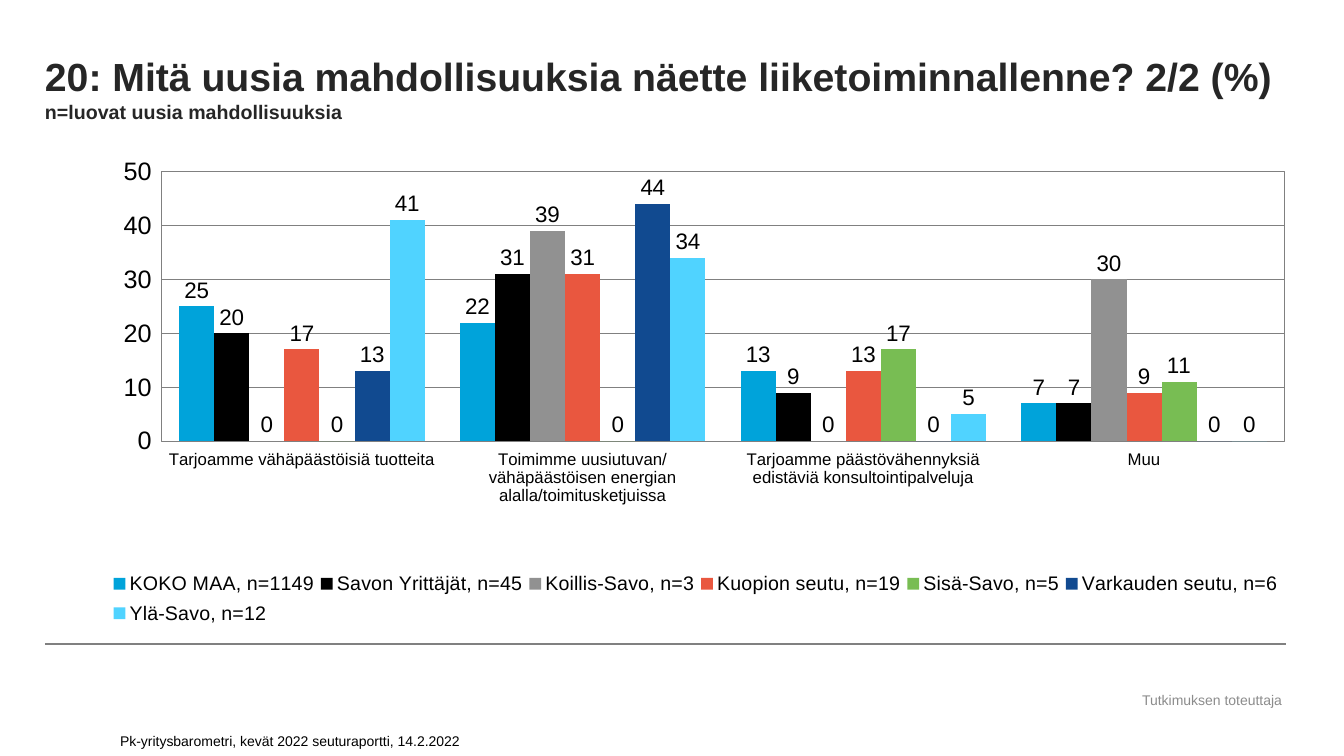
from lxml import etree
from pptx import Presentation
from pptx import util as u
from pptx.chart.data import CategoryChartData
from pptx.dml.color import RGBColor
from pptx.enum import chart as ch, shapes, text
from pptx.oxml import ns

PX = 914400 / 100.8
THEME = {
    "font": "Arial", "title": "262626", "ink": "000000", "muted": "8C8C8C", "line": "808080",
    "head": 28, "sub": 14, "note": 10, "axis": 18, "cat": 12, "label": 16, "key": 14,
}
CATS = [
    "Tarjoamme vähäpäästöisiä tuotteita",
    "Toimimme uusiutuvan/vähäpäästöisen energian alalla/toimitusketjuissa",
    "Tarjoamme päästövähennyksiä edistäviä konsultointipalveluja",
    "Muu",
]
SERIES = [
    ("KOKO MAA, n=1149", (25, 22, 13, 7), "00A3DA"),
    ("Savon Yrittäjät, n=45", (20, 31, 9, 7), "000000"),
    ("Koillis-Savo, n=3", (0, 39, 0, 30), "919191"),
    ("Kuopion seutu, n=19", (17, 31, 13, 9), "E9573F"),
    ("Sisä-Savo, n=5", (0, 0, 17, 11), "78BD53"),
    ("Varkauden seutu, n=6", (13, 44, 0, 0), "114A90"),
    ("Ylä-Savo, n=12", (41, 34, 5, 0), "50D3FF"),
]


def style(font, size, color="ink", bold=False):
    form = {"name": THEME["font"], "size": u.Pt(THEME[size]), "bold": bold}
    for key, val in form.items():
        setattr(font, key, val)
    font.color.rgb = RGBColor.from_string(THEME[color])


def place(part, index, **spots):
    """Give a chart part a manual layout."""
    for old in part.findall(ns.qn("c:layout")):
        part.remove(old)
    layout = etree.Element(ns.qn("c:layout"))
    manual = etree.SubElement(layout, ns.qn("c:manualLayout"))
    for tag, val in spots.items():
        etree.SubElement(manual, ns.qn("c:" + tag)).set("val", str(val))
    part.insert(index, layout)


deck = Presentation()
deck.slide_width, deck.slide_height = round(1344 * PX), round(756 * PX)
slide = deck.slides.add_slide(deck.slide_layouts[6])

# Title, source note and footer
TEXTS = [
    ((45, 0, 1240, 123), 0, text.MSO_ANCHOR.BOTTOM, text.PP_ALIGN.LEFT, [
        ("20: Mitä uusia mahdollisuuksia näette liiketoiminnallenne? 2/2 (%)", "head", "title", True),
        ("n=luovat uusia mahdollisuuksia", "sub", "title", True)]),
    ((110, 719, 545, 35), 5, text.MSO_ANCHOR.BOTTOM, text.PP_ALIGN.LEFT, [
        ("Pk-yritysbarometri, kevät 2022 seuturaportti, 14.2.2022", "note", "ink", False)]),
    ((1125, 687, 174, 26), 5, text.MSO_ANCHOR.MIDDLE, text.PP_ALIGN.CENTER, [
        ("Tutkimuksen toteuttaja", "note", "muted", False)]),
]
for box, pad, anchor, align, runs in TEXTS:
    frame = slide.shapes.add_textbox(*[round(n * PX) for n in box]).text_frame
    form = {
        "word_wrap": True, "vertical_anchor": anchor,
        "margin_left": round(2 * pad * PX), "margin_right": round(2 * pad * PX),
        "margin_top": round(pad * PX), "margin_bottom": round(pad * PX),
    }
    for key, val in form.items():
        setattr(frame, key, val)
    para = frame.paragraphs[0]
    para.alignment = align
    for i, (words, size, color, bold) in enumerate(runs):
        if i:
            para.add_line_break()
        run = para.add_run()
        run.text = words
        style(run.font, size, color, bold)

# Rule above the footer
ends = [round(n * PX) for n in (45, 644, 1286, 644)]
rule = slide.shapes.add_connector(shapes.MSO_CONNECTOR.STRAIGHT, *ends)
rule.line.width = u.Pt(1.5)
rule.line.color.rgb = RGBColor.from_string(THEME["line"])
etree.SubElement(rule.element.spPr, ns.qn("a:effectLst"))

# Column chart
data = CategoryChartData(number_format="#,##0")
data.categories = CATS
for name, vals, color in SERIES:
    data.add_series(name, vals)
area = [round(n * PX) for n in (45, 156, 1240, 476)]
chart = slide.shapes.add_chart(ch.XL_CHART_TYPE.COLUMN_CLUSTERED, *area, data).chart
chart.has_title = False
style(chart.font, "axis")
plot = chart.plots[0]
plot.gap_width, plot.overlap, plot.vary_by_categories = 100, 0, False
for item, (name, vals, color) in zip(plot.series, SERIES):
    item.format.fill.solid()
    item.format.fill.fore_color.rgb = RGBColor.from_string(color)
    item.invert_if_negative = False
    labels = item.data_labels
    form = {
        "show_value": True, "number_format": "#,##0", "number_format_is_linked": False,
        "position": ch.XL_LABEL_POSITION.OUTSIDE_END,
    }
    for key, val in form.items():
        setattr(labels, key, val)
    style(labels.font, "label")

# Axes and grid
cat, val = chart.category_axis, chart.value_axis
val.minimum_scale, val.maximum_scale, val.major_unit = 0, 50, 10
val.has_major_gridlines = True
for axis, size in ((cat, "cat"), (val, "axis")):
    axis.major_tick_mark = axis.minor_tick_mark = ch.XL_TICK_MARK.NONE
    axis.tick_label_position = ch.XL_TICK_LABEL_POSITION.LOW
    style(axis.tick_labels.font, size)
for part in (cat, val, val.major_gridlines):
    part.format.line.width = u.Pt(0.75)
    part.format.line.color.rgb = RGBColor.from_string(THEME["line"])

# Plot frame
body = chart.element.find(".//" + ns.qn("c:plotArea"))
look = etree.SubElement(body, ns.qn("c:spPr"))
etree.SubElement(look, ns.qn("a:noFill"))
edge = etree.SubElement(look, ns.qn("a:ln"), w="9525")
fill = etree.SubElement(edge, ns.qn("a:solidFill"))
etree.SubElement(fill, ns.qn("a:srgbClr"), val=THEME["line"])
place(body, 0, layoutTarget="inner", xMode="edge", yMode="edge", x=0.094, y=0.033, w=0.906, h=0.566)

# Legend below the plot
chart.has_legend = True
key = chart.legend
key.position = ch.XL_LEGEND_POSITION.RIGHT
key.include_in_layout = False
style(key.font, "key")
legend = chart.element.find(".//" + ns.qn("c:legend"))
place(legend, 1, xMode="edge", yMode="edge", x=0.05, y=0.86, w=0.95, h=0.14)

deck.save("out.pptx")
